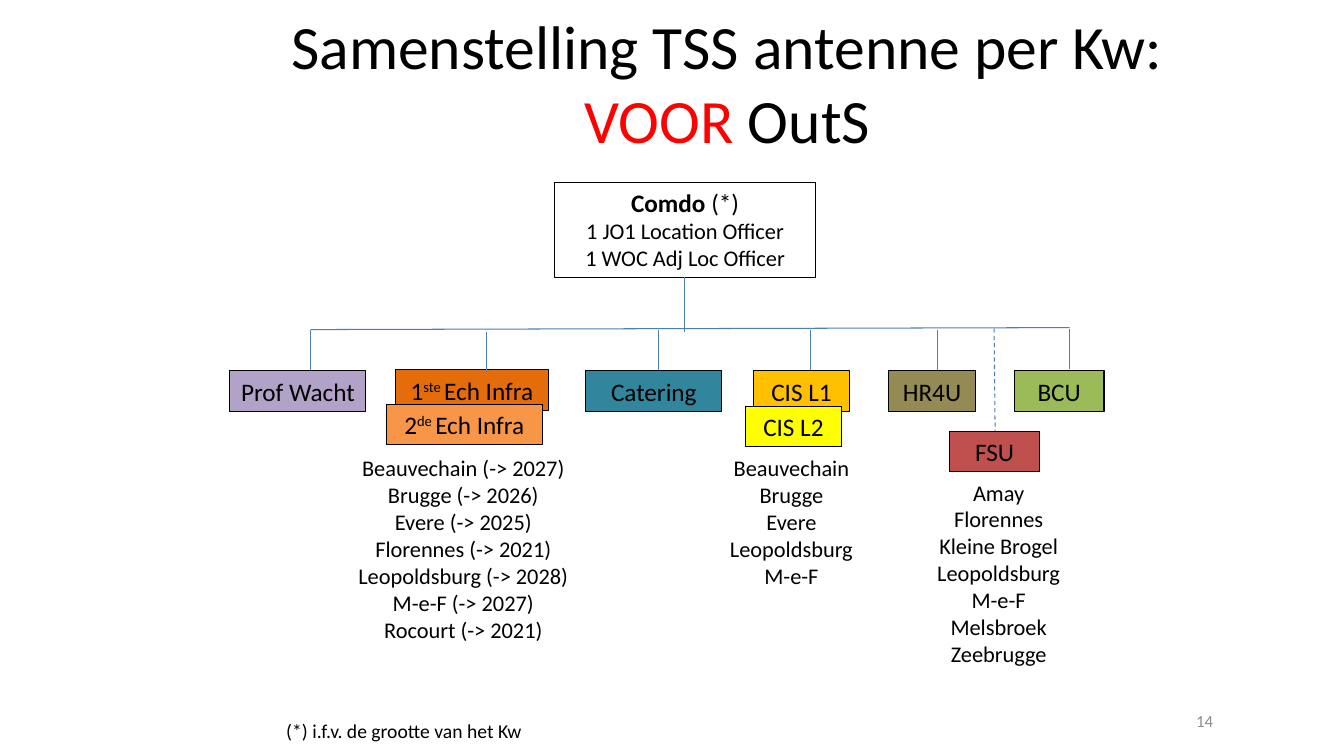
from lxml import etree
from pptx import Presentation
from pptx import util as u
from pptx.dml.color import RGBColor
from pptx.enum import dml, shapes, text
from pptx.oxml.ns import qn

COLORS = {
    "black": "000000", "white": "FFFFFF", "red": "FF0000", "grey": "8C8C8C",
    "line": "4B7EBC", "orange": "E46C0A", "light_orange": "F79646",
    "purple": "B3A2C7", "gold": "FFC000", "yellow": "FFFF00",
    "teal": "31859C", "olive": "948A54", "green": "9BBB59", "brick": "C0504D",
}


def rgb(name):
    return RGBColor.from_string(COLORS[name])


def add_run(p, content, size=18, color="black", bold=False, raised=False, font="Calibri"):
    r = p.add_run()
    r.text = content
    r.font.name = font
    r.font.size = u.Pt(size)
    r.font.bold = bold
    r.font.color.rgb = rgb(color)
    if raised:
        r._r.get_or_add_rPr().set("baseline", "30000")


class OrgSlide:
    def __init__(self, prs):
        self.s = prs.slides.add_slide(prs.slide_layouts[6])
        self.outline = u.Pt(0.75)

    def fill_text(self, tf, paragraphs, align, anchor, wrap, **fmt):
        tf.word_wrap = wrap
        tf.vertical_anchor = anchor
        for i, runs in enumerate(paragraphs):
            p = tf.paragraphs[0] if i == 0 else tf.add_paragraph()
            p.alignment = align
            for run in [runs] if isinstance(runs, str) else runs:
                if run == "\n":
                    p.add_line_break()
                elif isinstance(run, str):
                    add_run(p, run, **fmt)
                else:
                    add_run(p, run[0], **{**fmt, **run[1]})

    def label(self, at, paragraphs, align=text.PP_ALIGN.CENTER,
              anchor=text.MSO_ANCHOR.TOP, wrap=True, **fmt):
        sp = self.s.shapes.add_textbox(*map(u.Inches, at))
        self.fill_text(sp.text_frame, paragraphs, align, anchor, wrap, **fmt)

    def box(self, at, paragraphs, fill, **fmt):
        sp = self.s.shapes.add_shape(shapes.MSO_SHAPE.RECTANGLE, *map(u.Inches, at))
        sp.shadow.inherit = False
        sp.fill.solid()
        sp.fill.fore_color.rgb = rgb(fill)
        sp.line.color.rgb = rgb("black")
        sp.line.width = self.outline
        self.fill_text(sp.text_frame, paragraphs, text.PP_ALIGN.CENTER,
                       text.MSO_ANCHOR.TOP, False, **fmt)

    def line(self, x1, y1, x2, y2, dashed=False):
        c = self.s.shapes.add_connector(
            shapes.MSO_CONNECTOR.STRAIGHT, *map(u.Inches, (x1, y1, x2, y2)))
        c.line.color.rgb = rgb("line")
        c.line.width = self.outline
        if dashed:
            c.line.dash_style = dml.MSO_LINE.DASH
        etree.SubElement(c._element.spPr, qn("a:effectLst"))


def main():
    prs = Presentation()
    prs.slide_width, prs.slide_height = u.Inches(13.33), u.Inches(7.5)
    org = OrgSlide(prs)
    middle = text.MSO_ANCHOR.MIDDLE

    org.label((2.76, 0.19, 8.91, 1.25),
              [["Samenstelling TSS antenne per Kw:", "\n",
                ("VOOR ", {"color": "red"}), "OutS"]], anchor=middle, size=44)
    org.label((9.77, 6.95, 2.36, 0.4), ["14"], align=text.PP_ALIGN.RIGHT,
              anchor=middle, size=12, color="grey")

    org.box((5.5, 1.81, 2.59, 0.94),
            [[("Comdo ", {"size": 18, "bold": True}), ("(*)", {"size": 18})],
             "1 JO1 Location Officer", "1 WOC Adj Loc Officer"], "white", size=16)

    units = [
        (3.92, 3.67, 1.52, ["1", ("ste ", {"raised": True}), "Ech Infra"], "orange"),
        (2.28, 3.68, 1.35, "Prof Wacht", "purple"),
        (7.47, 3.68, 0.96, "CIS L1", "gold"),
        (5.81, 3.68, 1.35, "Catering", "teal"),
        (8.81, 3.68, 0.87, "HR4U", "olive"),
        (10.06, 3.68, 0.89, "BCU", "green"),
        (9.42, 4.28, 0.89, "FSU", "brick"),
        (7.39, 4.03, 0.96, "CIS L2", "yellow"),
        (3.83, 4.01, 1.55, ["2", ("de ", {"raised": True}), "Ech Infra"], "light_orange"),
    ]
    for x, y, w, name, fill in units:
        org.box((x, y, w, 0.4), [name], fill)

    org.line(6.79, 2.75, 6.79, 3.29)
    org.line(3.08, 3.27, 10.61, 3.25)
    for x, y in [(3.08, 3.27), (4.83, 3.29), (6.53, 3.27),
                 (8.04, 3.27), (9.3, 3.27), (10.61, 3.26)]:
        org.line(x, y, x, y + 0.4)
    org.line(9.86, 3.26, 9.87, 4.28, dashed=True)

    org.label((3.44, 4.46, 2.31, 1.99),
              ["Beauvechain (-> 2027)", "Brugge (-> 2026)", "Evere (-> 2025)",
               "Florennes (-> 2021)", "Leopoldsburg (-> 2028)", "M-e-F (-> 2027)",
               "Rocourt (-> 2021)"], wrap=False, size=16)
    org.label((7.13, 4.46, 1.44, 1.45),
              ["Beauvechain", "Brugge", "Evere", "Leopoldsburg", "M-e-F"],
              wrap=False, size=16)
    org.label((9.15, 4.7, 1.51, 1.99),
              ["Amay", "Florennes", "Kleine Brogel", "Leopoldsburg", "M-e-F",
               "Melsbroek", "Zeebrugge"], size=16)
    org.label((2.74, 7.08, 2.56, 0.34), ["(*) i.f.v. de grootte van het Kw"],
              align=text.PP_ALIGN.LEFT, wrap=False, size=14)

    prs.save("out.pptx")


if __name__ == "__main__":
    main()
